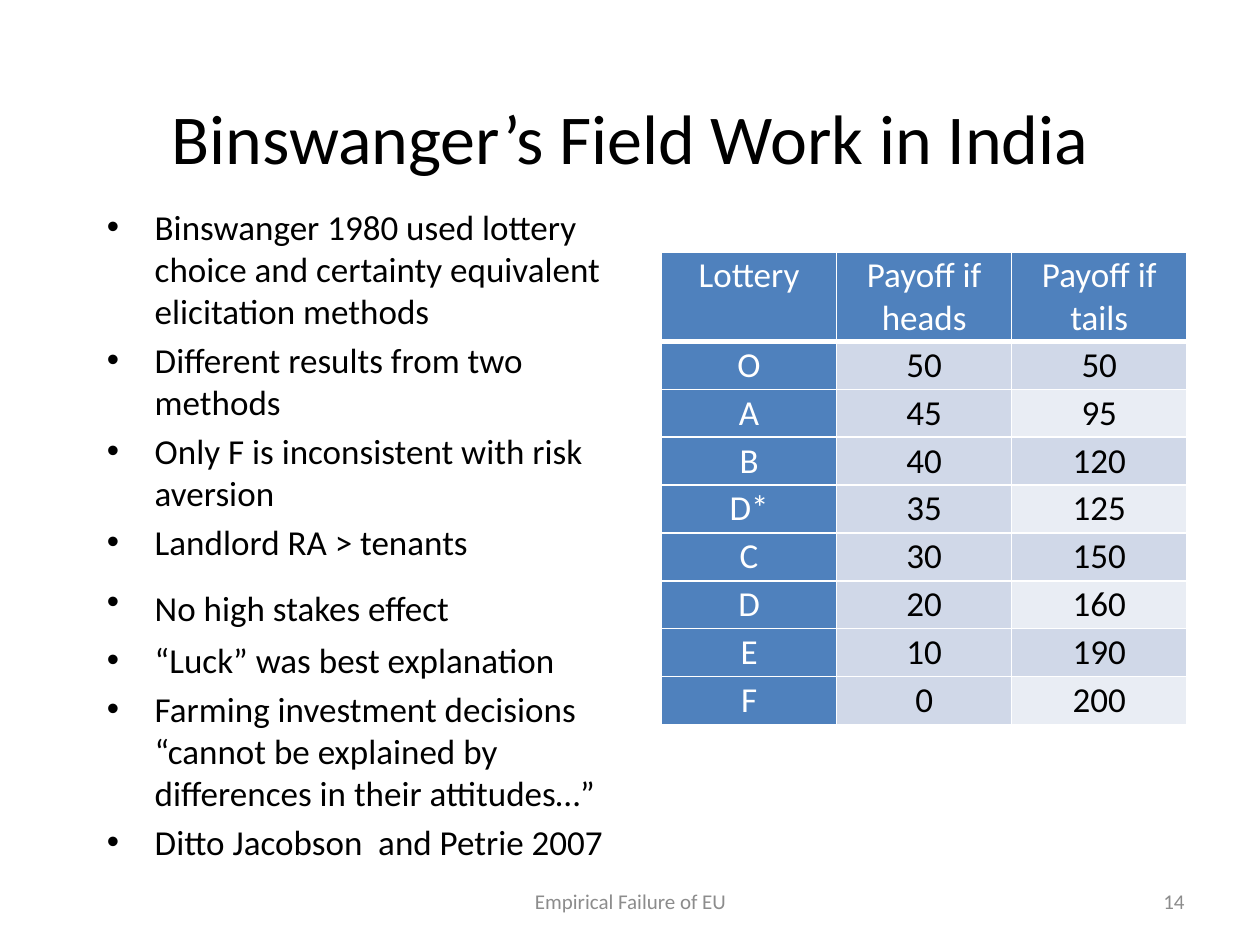
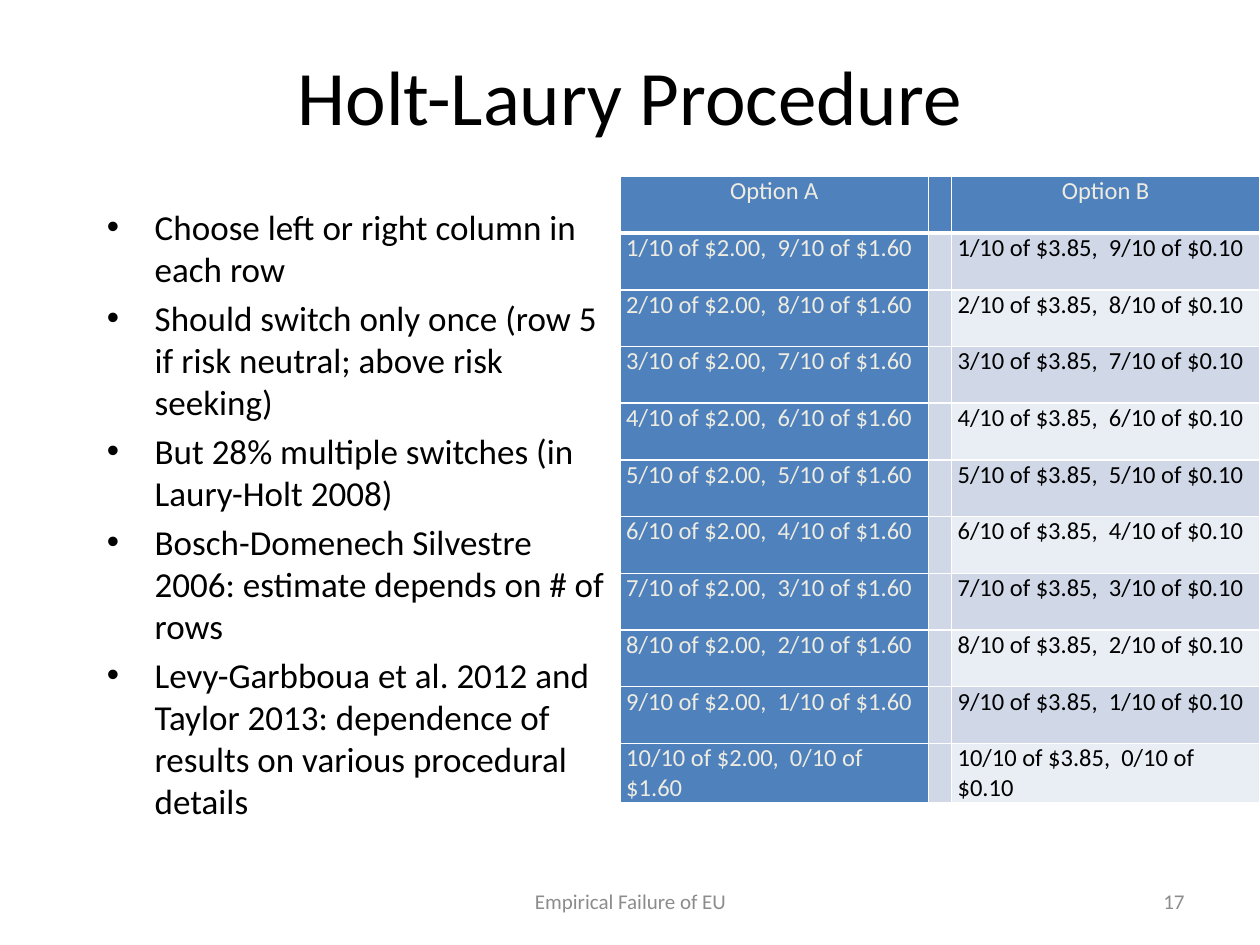
from dataclasses import dataclass

from lxml import etree
from pptx import Presentation
from pptx.dml.color import RGBColor
from pptx.enum.text import MSO_ANCHOR, PP_ALIGN
from pptx.oxml.ns import qn
from pptx.util import Inches, Pt

LEFT, CENTER, RIGHT = PP_ALIGN.LEFT, PP_ALIGN.CENTER, PP_ALIGN.RIGHT
TOP, MIDDLE = MSO_ANCHOR.TOP, MSO_ANCHOR.MIDDLE


@dataclass(frozen=True)
class Theme:
    font: str = "Calibri"
    text: str = "000000"
    white: str = "FFFFFF"
    cream: str = "EEECE1"
    muted: str = "8C8C8C"
    accent: str = "4F81BD"
    band: str = "D0D8E8"
    pale: str = "E9EDF4"
    body_size: int = 20
    wide_gap_size: int = 28
    option_size: int = 14
    footer_size: int = 12
    rule: int = 1
    header_rule: int = 3


THEME = Theme()
FOOTER = "Empirical Failure of EU"

FIELD_WORK_POINTS = [
    "Binswanger 1980 used lottery choice and certainty equivalent elicitation methods",
    "Different results from two methods",
    "Only F is inconsistent with risk aversion",
    "Landlord RA > tenants",
    "No high stakes effect",
    "“Luck” was best explanation",
    "Farming investment decisions “cannot be explained by differences in their attitudes…”",
    "Ditto Jacobson  and Petrie 2007",
]
TALL_POINT = 4

LOTTERIES = [
    ("Lottery", "Payoff if heads", "Payoff if tails"),
    ("O", "50", "50"),
    ("A", "45", "95"),
    ("B", "40", "120"),
    ("D*", "35", "125"),
    ("C", "30", "150"),
    ("D", "20", "160"),
    ("E", "10", "190"),
    ("F", "0", "200"),
]

PROCEDURE_POINTS = [
    "Choose left or right column in each row",
    "Should switch only once (row 5 if risk neutral; above risk seeking)",
    "But 28% multiple switches (in Laury-Holt 2008)",
    "Bosch-Domenech Silvestre 2006: estimate depends on # of rows",
    "Levy-Garbboua et al. 2012 and Taylor 2013: dependence of results on "
    "various procedural details",
]


def gamble(tenths, high, low):
    return f"{tenths}/10 of ${high},  {10 - tenths}/10 of ${low}"


def write(paragraph, text, *, size=THEME.body_size, color=THEME.text, align=LEFT):
    paragraph.alignment = align
    run = paragraph.add_run()
    run.text = text
    run.font.name = THEME.font
    run.font.size = Pt(size)
    run.font.color.rgb = RGBColor.from_string(color)


def add_frame(slide, left, top, width, height, anchor=MIDDLE):
    box = slide.shapes.add_textbox(Inches(left), Inches(top), Inches(width), Inches(height))
    frame = box.text_frame
    frame.word_wrap = True
    frame.vertical_anchor = anchor
    return frame


def add_line(slide, text, left, top, width, height, **style):
    frame = add_frame(slide, left, top, width, height)
    write(frame.paragraphs[0], text, **style)


def add_bullets(slide, points, tall_point=None):
    """List the points; the tall one ends in a larger space that deepens its line."""
    frame = add_frame(slide, 0.75, 1.58, 4.17, 5.08, anchor=TOP)
    for index, point in enumerate(points):
        paragraph = frame.paragraphs[0] if index == 0 else frame.add_paragraph()
        write(paragraph, point)
        tallest = THEME.body_size
        if index == tall_point:
            tallest = THEME.wide_gap_size
            write(paragraph, " ", size=tallest)
        paragraph.space_before = Pt(0.2 * tallest)
        properties = paragraph._p.get_or_add_pPr()
        properties.set("marL", str(Inches(0.38)))
        properties.set("indent", str(Inches(-0.38)))
        etree.SubElement(properties, qn("a:buFont"), typeface="Arial")
        etree.SubElement(properties, qn("a:buChar"), char="•")


def set_borders(cell, bottom):
    properties = cell._tc.get_or_add_tcPr()
    for side in "LRTB":
        weight = bottom if side == "B" else THEME.rule
        line = etree.SubElement(properties, qn(f"a:ln{side}"), w=str(Pt(weight)))
        fill = etree.SubElement(line, qn("a:solidFill"))
        etree.SubElement(fill, qn("a:srgbClr"), val=THEME.white)


def cell_fill(row, column, last_column):
    if row == 0 or column == 0:
        return THEME.accent
    return THEME.pale if column == last_column and row % 2 == 0 else THEME.band


def add_payoff_table(slide, rows, left, top, widths, heights, margins, *,
                     size, accent_text, body_align):
    """Header row and first column are accented; the last column is banded."""
    table = slide.shapes.add_table(
        len(rows), len(widths), Inches(left), Inches(top),
        Inches(sum(widths)), Inches(sum(heights))).table
    table.first_row = table.horz_banding = False
    for column, width in zip(table.columns, widths):
        column.width = Inches(width)
    side, edge = map(Inches, margins)
    for r, (values, height) in enumerate(zip(rows, heights)):
        table.rows[r].height = Inches(height)
        for c, value in enumerate(values):
            cell = table.cell(r, c)
            cell.margin_left = cell.margin_right = side
            cell.margin_top = cell.margin_bottom = edge
            set_borders(cell, THEME.header_rule if r == 0 else THEME.rule)
            cell.fill.solid()
            fill = cell_fill(r, c, len(widths) - 1)
            cell.fill.fore_color.rgb = RGBColor.from_string(fill)
            if value:
                write(cell.text_frame.paragraphs[0], value, size=size,
                      color=accent_text if fill == THEME.accent else THEME.text,
                      align=CENTER if r == 0 else body_align)


def add_slide(deck, number):
    slide = deck.slides.add_slide(deck.slide_layouts[6])
    footer_style = {"size": THEME.footer_size, "color": THEME.muted}
    add_line(slide, FOOTER, 3.42, 6.95, 3.17, 0.4, align=CENTER, **footer_style)
    add_line(slide, str(number), 7.17, 6.95, 2.33, 0.4, align=RIGHT, **footer_style)
    return slide


def add_field_work(deck):
    slide = add_slide(deck, 14)
    add_line(slide, "Binswanger’s Field Work in India", 0.75, 0.67, 8.5, 0.83,
             size=40, align=CENTER)
    add_bullets(slide, FIELD_WORK_POINTS, TALL_POINT)
    add_payoff_table(slide, LOTTERIES, 5.25, 2, [1.39] * 3, [0.71] + [0.38] * 8,
                     (0.02, 0.02), size=THEME.body_size,
                     accent_text=THEME.white, body_align=CENTER)


def add_procedure(deck):
    slide = add_slide(deck, 17)
    add_line(slide, "Holt-Laury Procedure", 0.75, 0.25, 8.5, 1, size=44, align=CENTER)
    add_bullets(slide, PROCEDURE_POINTS)
    options = [("Option A", "", "Option B")]
    options += [(gamble(n, "2.00", "1.60"), "", gamble(n, "3.85", "0.10"))
                for n in range(1, 11)]
    add_payoff_table(slide, options, 4.92, 1.4, [2.45, 0.18, 2.45], [0.45] * 11,
                     (0.05, 0), size=THEME.option_size,
                     accent_text=THEME.cream, body_align=LEFT)


def main():
    deck = Presentation()
    deck.slide_width, deck.slide_height = Inches(10), Inches(7.5)
    add_field_work(deck)
    add_procedure(deck)
    deck.save("out.pptx")


if __name__ == "__main__":
    main()
